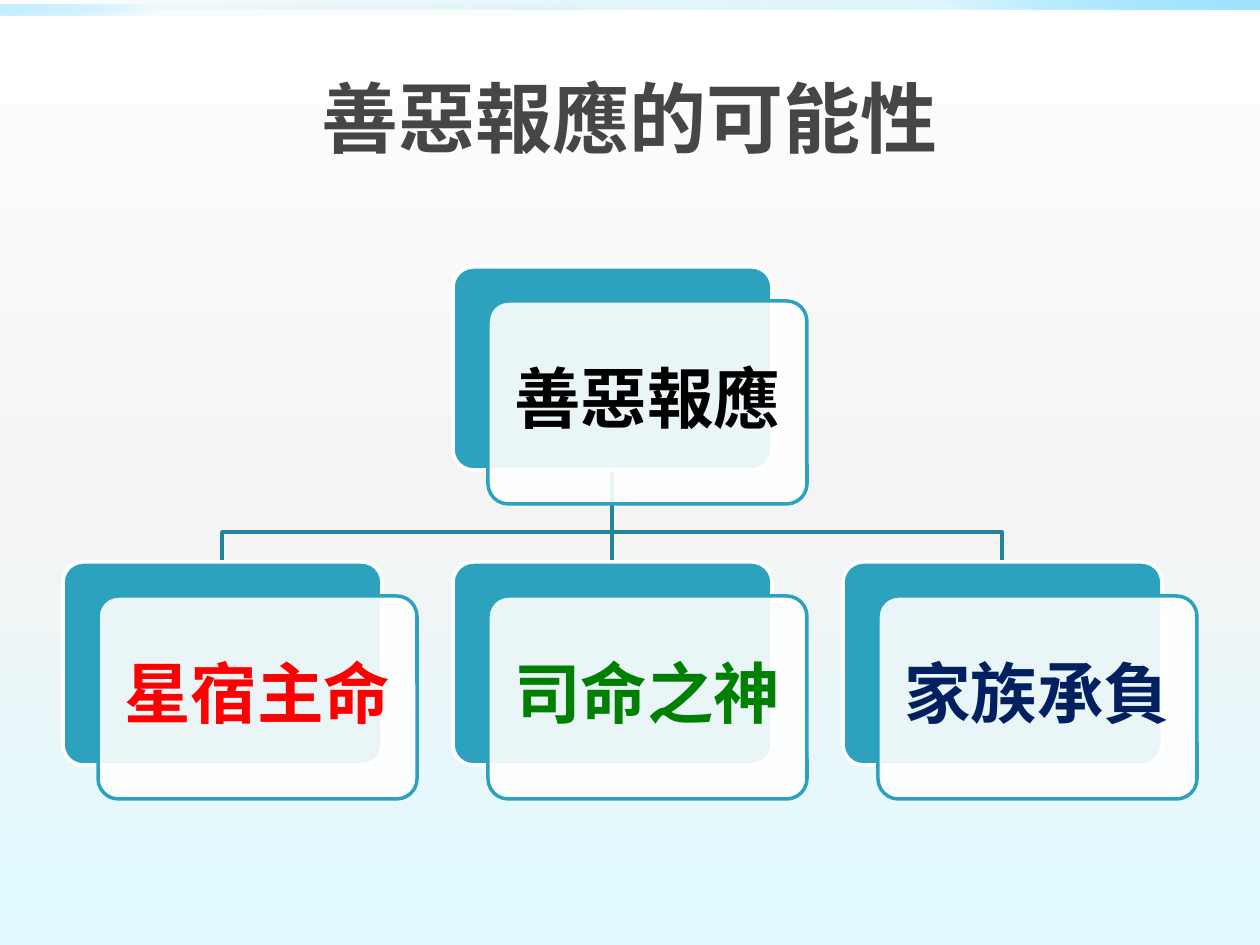
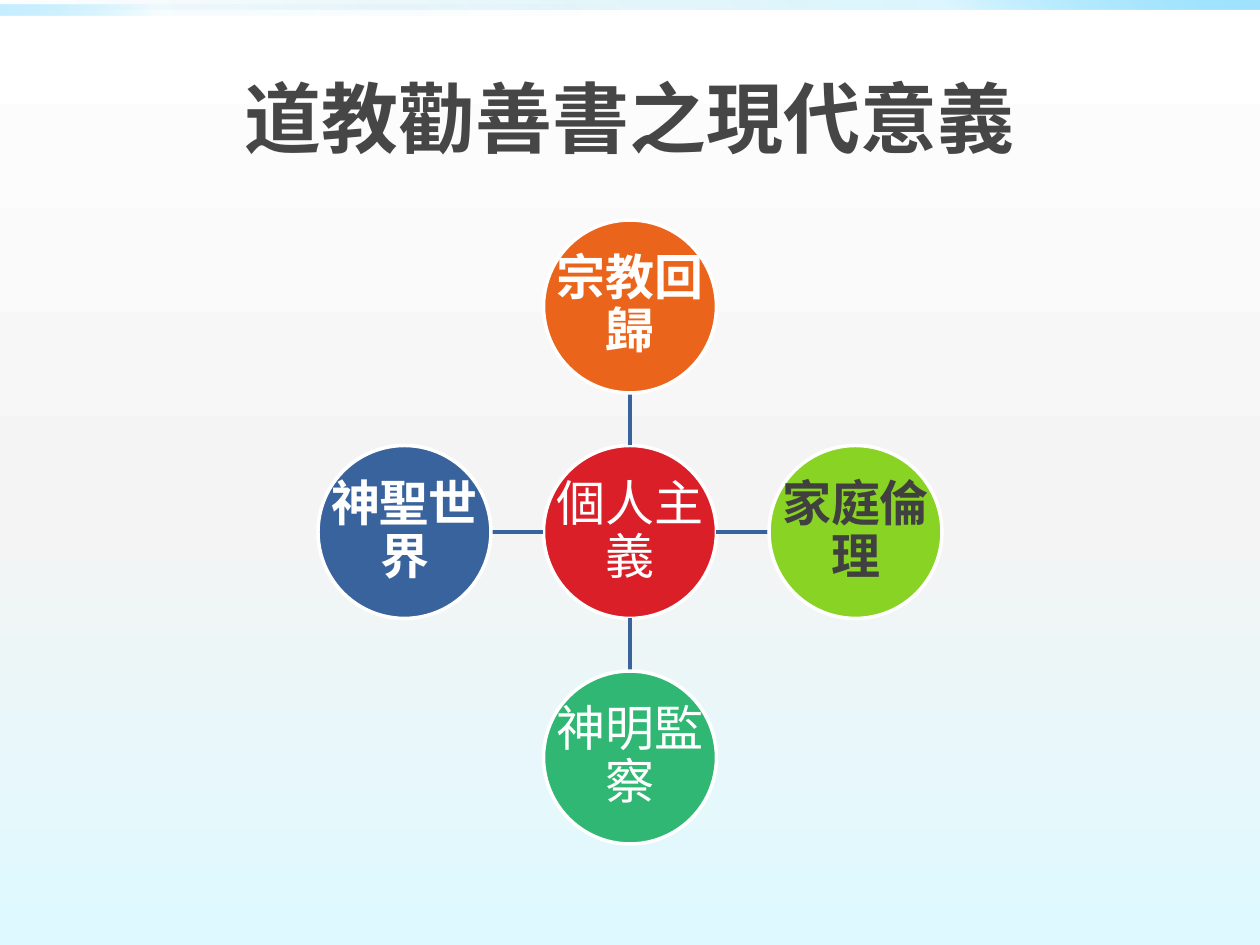
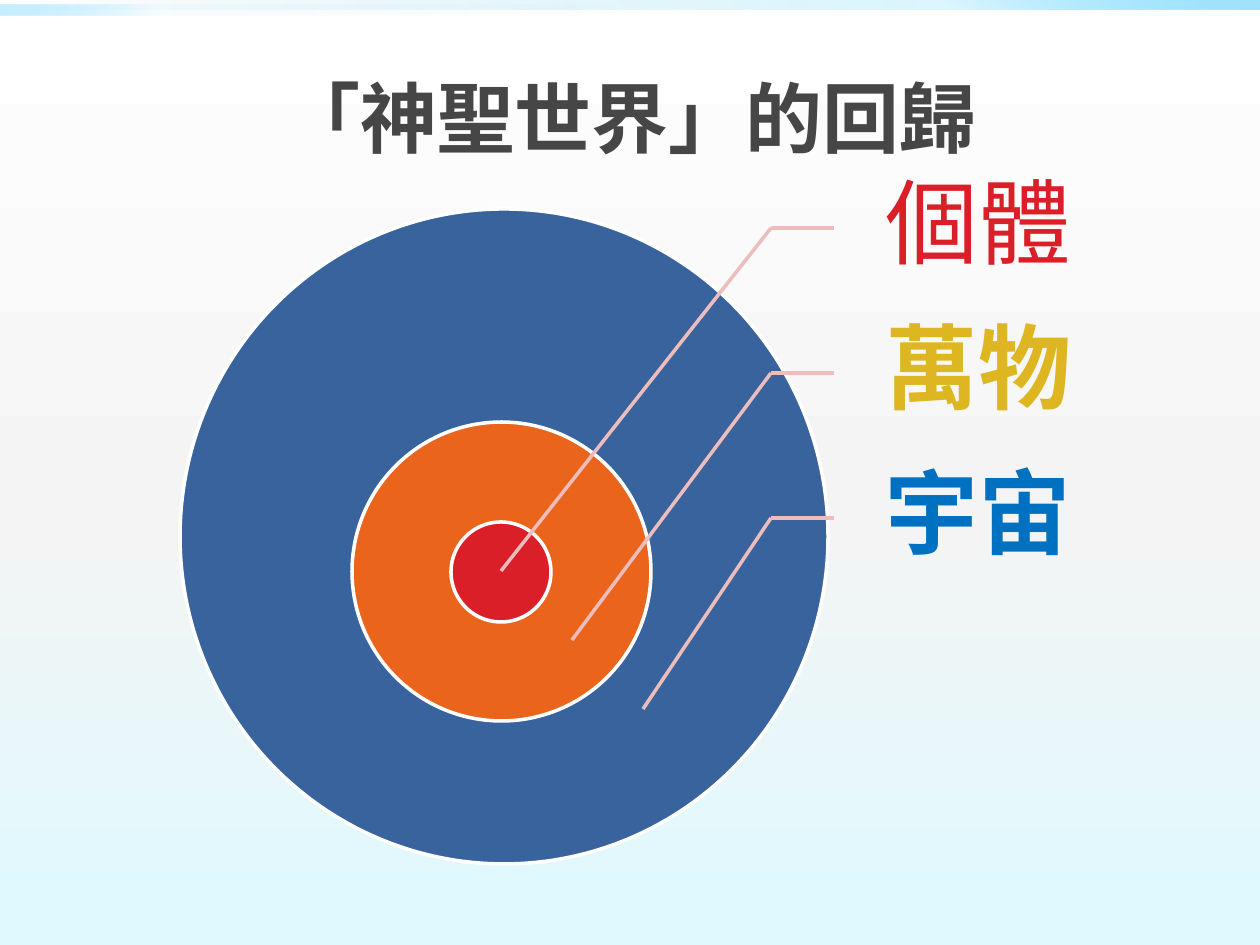
from dataclasses import dataclass
from lxml import etree
from pptx import Presentation
from pptx import util as u
from pptx.dml.color import RGBColor
from pptx.enum import shapes, text
from pptx.oxml.ns import qn

PX = 914400 / 126  # EMU in one px
SLIDE_W, SLIDE_H = 1260, 945


@dataclass(frozen=True)
class Theme:
    title_font: str = "Roboto"
    body_font: str = "Cambria"
    title_size: int = 44
    card_size: int = 38
    circle_size: int = 28
    label_size: int = 53
    line_width: int = 2
    white: str = "FFFFFF"
    black: str = "000000"
    title: str = "464646"
    dark: str = "404040"
    teal: str = "2DA2BF"
    branch: str = "248299"
    blue: str = "39639D"
    orange: str = "EB641B"
    red: str = "DA1F28"
    lime: str = "88D323"
    green: str = "2FB773"
    gold: str = "DEB622"
    leader: str = "EDBDBE"
    star: str = "FF0000"
    deity: str = "008000"
    family: str = "002060"
    cosmos: str = "0070C0"
    # Gradient stops: position, colour, opacity, all in percent
    background: tuple = ((0, "FFFFFF", 100), (55, "F4F4F4", 100), (100, "DEF9FF", 100))
    wide_band: tuple = ((0, "008CAF", 0), (75, "52D0FF", 20), (100, "A1E3FF", 100))
    half_band: tuple = ((0, "008CAF", 0), (75, "52D0FF", 5), (100, "A1E3FF", 60))


T = Theme()


def px(*values):
    return [u.Emu(round(v * PX)) for v in values]


def set_alpha(colour, percent):
    etree.SubElement(colour, qn("a:alpha")).set("val", str(percent * 1000))


def set_gradient(fill, element, stops, angle):
    """Give the fill found inside element its stops and clockwise angle."""
    fill.gradient()
    grad = element.find(".//" + qn("a:gradFill"))
    gs_list = grad.find(qn("a:gsLst"))
    for old in list(gs_list):
        gs_list.remove(old)
    for position, colour, alpha in stops:
        gs = etree.SubElement(gs_list, qn("a:gs"), pos=str(position * 1000))
        clr = etree.SubElement(gs, qn("a:srgbClr"), val=colour)
        if alpha < 100:
            set_alpha(clr, alpha)
    grad.find(qn("a:lin")).set("ang", str(angle * 60000))


def set_line(line, colour):
    line.color.rgb = RGBColor.from_string(colour)
    line.width = u.Pt(T.line_width)


def add_shape(s, kind, box, fill, line=T.white):
    sp = s.shapes.add_shape(kind, *px(*box))
    sp.shadow.inherit = False
    sp.fill.solid()
    sp.fill.fore_color.rgb = RGBColor.from_string(fill)
    set_line(sp.line, line)
    return sp


def add_text(s, box, words, size, colour, bold=True, font=T.body_font,
             align=text.PP_ALIGN.CENTER, margins=(0, 0, 0, 0), spacing=0.9):
    tf = s.shapes.add_textbox(*px(*box)).text_frame
    tf.word_wrap = True
    tf.vertical_anchor = text.MSO_ANCHOR.MIDDLE
    tf.margin_left, tf.margin_top, tf.margin_right, tf.margin_bottom = px(*margins)
    p = tf.paragraphs[0]
    p.alignment = align
    p.line_spacing = spacing
    r = p.add_run()
    r.text = words
    r.font.name = font
    r.font.size = u.Pt(size)
    r.font.bold = bold
    r.font.color.rgb = RGBColor.from_string(colour)


def add_line(s, start, end, colour):
    line = s.shapes.add_connector(shapes.MSO_CONNECTOR.STRAIGHT, *px(*start, *end))
    etree.SubElement(line._element.spPr, qn("a:effectLst"))
    set_line(line.line, colour)
    # The effect list must follow the line properties
    line._element.spPr.append(line._element.spPr.find(qn("a:effectLst")))


def add_elbow(s, points, colour):
    start, *rest = [px(*point) for point in points]
    builder = s.shapes.build_freeform(*start)
    builder.add_line_segments(rest, close=False)
    sp = builder.convert_to_shape()
    sp.shadow.inherit = False
    sp.fill.background()
    set_line(sp.line, colour)


def add_slide(prs, title):
    """Add a slide with the shared background, top bands and title."""
    s = prs.slides.add_slide(prs.slide_layouts[6])
    set_gradient(s.background.fill, s._element, T.background, 90)
    for box, stops, angle in (((0, 0, SLIDE_W, 10), T.wide_band, 315),
                              ((0, 5, SLIDE_W // 2, 10), T.half_band, 135)):
        band = s.shapes.add_shape(shapes.MSO_SHAPE.RECTANGLE, *px(*box))
        band.shadow.inherit = False
        band.line.fill.background()
        set_gradient(band.fill, band._element, stops, angle)
    add_text(s, (63, 38, 1134, 157), title, T.title_size, T.title,
             font=T.title_font, margins=(13, 6, 13, 6), spacing=1)
    return s


def add_card(s, box, words, colour):
    """Draw a teal plate with a translucent captioned panel in front of it."""
    x, y, w, h = box
    panel_box = (x + 35, y + 34, w, h)
    rounded = shapes.MSO_SHAPE.ROUNDED_RECTANGLE
    plate = add_shape(s, rounded, box, T.teal)
    panel = add_shape(s, rounded, panel_box, T.white, T.teal)
    plate.adjustments[0] = panel.adjustments[0] = 0.1
    set_alpha(panel._element.spPr.find(qn("a:solidFill"))[0], 90)
    add_text(s, panel_box, words, T.card_size, colour, margins=(20, 20, 20, 20))


def add_tree(s, box, root, children):
    x, y, w, h = box
    card_w, card_h = 319, 203
    pitch = (w - 35 - card_w) // (len(children) - 1)
    child_y = y + h - 34 - card_h
    root_x = x + pitch
    trunk_x, trunk_y = root_x + card_w // 2, y + card_h
    bus_y = child_y - 30
    for end_x in (trunk_x + pitch, trunk_x - pitch):
        add_elbow(s, [(trunk_x, trunk_y), (trunk_x, bus_y),
                      (end_x, bus_y), (end_x, child_y)], T.branch)
    add_line(s, (trunk_x, trunk_y), (trunk_x, child_y), T.branch)
    add_card(s, (root_x, y, card_w, card_h), *root)
    for i, child in enumerate(children):
        add_card(s, (x + i * pitch, child_y, card_w, card_h), *child)


def add_radial(s, box, hub, satellites):
    """Place a hub in the box with satellites above, right, below and left."""
    x, y, w, h = box
    size = 173
    cx, cy = x + w // 2, y + h // 2
    pitch = (w - size) / 2

    def add_circle(center_x, center_y, words, fill, colour, bold):
        circle = (center_x - size / 2, center_y - size / 2, size, size)
        add_shape(s, shapes.MSO_SHAPE.OVAL, circle, fill)
        add_text(s, circle, words, T.circle_size, colour, bold, margins=(3, 3, 3, 3))

    add_circle(cx, cy, *hub)
    directions = ((0, -1), (1, 0), (0, 1), (-1, 0))
    for (dx, dy), satellite in zip(directions, satellites):
        near, far = size / 2, pitch - size / 2
        add_line(s, (cx + dx * near, cy + dy * near),
                 (cx + dx * far, cy + dy * far), T.blue)
        add_circle(cx + dx * pitch, cy + dy * pitch, *satellite)


def add_target(s, box, labels):
    """Draw nested circles and labels, from the inmost circle outwards."""
    x, y, w, h = box
    rings = (((0, 54, 648, 655), T.blue), ((172, 267, 299, 299), T.orange),
             ((271, 367, 100, 100), T.red))
    for (left, top, ring_w, ring_h), fill in rings:
        add_shape(s, shapes.MSO_SHAPE.OVAL, (x + left, y + top, ring_w, ring_h), fill)
    label_w, label_h = 249, 145
    label_x = x + w - label_w
    bend_x = label_x - 63
    for i, (words, colour, bold) in enumerate(labels):
        top = y + i * label_h
        middle = top + label_h // 2 + 1
        add_text(s, (label_x, top, label_w, label_h), words, T.label_size, colour,
                 bold, align=text.PP_ALIGN.LEFT, margins=(52, 9, 9, 9))
        add_line(s, (bend_x, middle), (label_x, middle), T.leader)
        add_line(s, (bend_x, middle), (x + 321 + 71 * i, y + 416 + 69 * i), T.leader)


def main():
    prs = Presentation()
    prs.slide_width, prs.slide_height = px(SLIDE_W, SLIDE_H)

    add_tree(add_slide(prs, "善惡報應的可能性"), (63, 267, 1134, 532),
             ("善惡報應", T.black),
             (("星宿主命", T.star), ("司命之神", T.deity), ("家族承負", T.family)))

    add_radial(add_slide(prs, "道教勸善書之現代意義"), (318, 220, 624, 624),
               ("個人主義", T.red, T.white, False),
               (("宗教回歸", T.orange, T.white, True),
                ("家庭倫理", T.lime, T.dark, True),
                ("神明監察", T.green, T.white, False),
                ("神聖世界", T.blue, T.white, True)))

    add_target(add_slide(prs, "「神聖世界」的回歸"), (180, 155, 903, 709),
               (("個體", T.red, False), ("萬物", T.gold, True),
                ("宇宙", T.cosmos, True)))

    prs.save("out.pptx")


if __name__ == "__main__":
    main()
